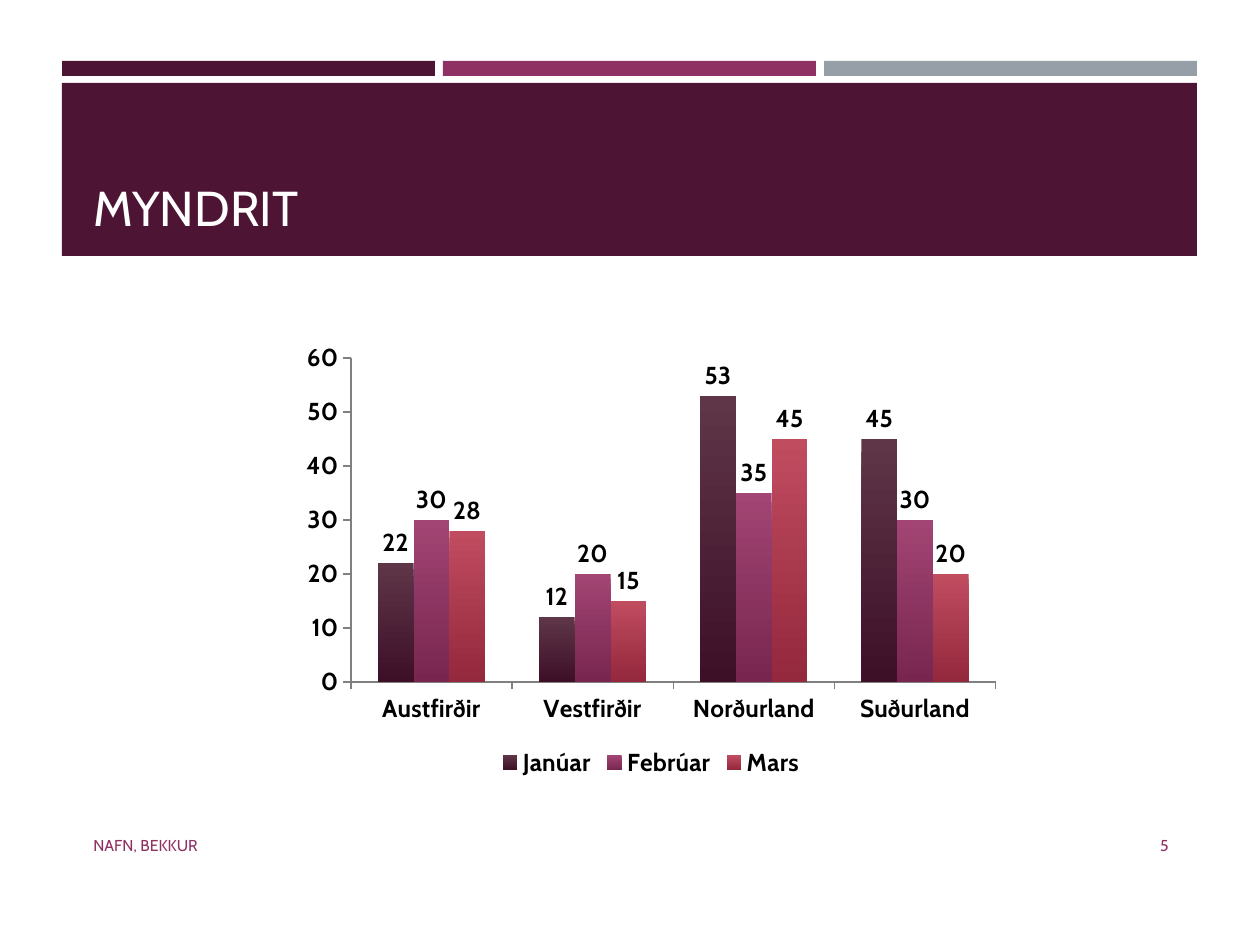
from dataclasses import dataclass

from pptx import Presentation
from pptx import util as u
from pptx.chart.data import CategoryChartData
from pptx.dml.color import RGBColor
from pptx.enum import chart as ch, shapes, text


@dataclass(frozen=True)
class Theme:
    """Colours, font and type sizes of the slide."""
    font: str = "Cabin"
    plum: str = "4D1434"
    rose: str = "903163"
    grey: str = "969FA7"
    white: str = "FFFFFF"
    black: str = "000000"
    axis: str = "808080"
    shades: tuple = (("5F3548", "3D1028"), ("A24574", "782650"),
                     ("C04C60", "94283C"))
    title: int = 28
    chart: int = 14
    foot: int = 9


THEME = Theme()
SCALE = 914400 / 126
AREAS = ("Austfirðir", "Vestfirðir", "Norðurland", "Suðurland")
MONTHS = {"Janúar": (22, 12, 53, 45), "Febrúar": (30, 20, 35, 30),
          "Mars": (28, 15, 45, 20)}


def px(*vals):
    """Turn pixels into EMU lengths."""
    return [u.Emu(round(val * SCALE)) for val in vals]


def rgb(code):
    """Turn a hex code into a colour."""
    return RGBColor.from_string(code)


def style(font, size, color, bold=False):
    """Set the face, size, colour and weight of a font."""
    font.name, font.size, font.bold = THEME.font, u.Pt(size), bold
    font.color.rgb = rgb(color)


def add_bar(slide, box, color):
    """Add a plain filled rectangle."""
    bar = slide.shapes.add_shape(shapes.MSO_SHAPE.RECTANGLE, *px(*box))
    bar.shadow.inherit = False
    bar.fill.solid()
    bar.fill.fore_color.rgb = rgb(color)
    bar.line.fill.background()


def write(shape, words, size, color, anchor, align):
    """Put one styled line of text in a shape."""
    frame = shape.text_frame
    frame.text = words
    frame.word_wrap = True
    frame.auto_size = text.MSO_AUTO_SIZE.NONE
    frame.vertical_anchor = anchor
    para = frame.paragraphs[0]
    para.alignment = align
    style(para.font, size, color)


def add_title(slide, box, words):
    """Move and fill the title placeholder on top of the band."""
    title = slide.shapes.title
    title.left, title.top, title.width, title.height = px(*box)
    write(title, words, THEME.title, THEME.white,
          text.MSO_ANCHOR.BOTTOM, text.PP_ALIGN.LEFT)
    tree = slide.shapes.element
    tree.remove(title.element)
    tree.append(title.element)


def add_foot(slide, box, words, align):
    """Add a small footer text."""
    note = slide.shapes.add_textbox(*px(*box))
    write(note, words, THEME.foot, THEME.rose, text.MSO_ANCHOR.MIDDLE, align)


def shade(fill, tones):
    """Fade a fill from the first tone at the top to the second."""
    fill.gradient()
    fill.gradient_angle = 270
    for stop, tone in zip(fill.gradient_stops, tones):
        stop.color.rgb = rgb(tone)


def add_chart(slide, box):
    """Add the clustered column chart of areas by month."""
    data = CategoryChartData()
    data.categories = AREAS
    for month, vals in MONTHS.items():
        data.add_series(month, vals)
    kind = ch.XL_CHART_TYPE.COLUMN_CLUSTERED
    chart = slide.shapes.add_chart(kind, *px(*box), data).chart
    style(chart.font, THEME.chart, THEME.black, True)
    chart.has_title = False
    chart.has_legend = True
    chart.legend.position = ch.XL_LEGEND_POSITION.BOTTOM
    chart.legend.include_in_layout = False
    for axis in (chart.category_axis, chart.value_axis):
        axis.has_major_gridlines = False
        axis.major_tick_mark = ch.XL_TICK_MARK.OUTSIDE
        axis.format.line.color.rgb = rgb(THEME.axis)
    scale = chart.value_axis
    scale.minimum_scale, scale.maximum_scale, scale.major_unit = 0, 60, 10
    plot = chart.plots[0]
    plot.gap_width, plot.overlap = 150, 0
    plot.vary_by_categories = False
    for row, tones in zip(plot.series, THEME.shades):
        shade(row.format.fill, tones)
        labels = row.data_labels
        labels.show_value = True
        labels.position = ch.XL_LABEL_POSITION.OUTSIDE_END
        style(labels.font, THEME.chart, THEME.black, True)


def main():
    """Build and save the slide."""
    deck = Presentation()
    deck.slide_width, deck.slide_height = px(1260, 945)
    slide = deck.slides.add_slide(deck.slide_layouts[5])
    for col, color in enumerate((THEME.plum, THEME.rose, THEME.grey)):
        add_bar(slide, (62 + 381 * col, 61, 373, 15), color)
    add_bar(slide, (62, 83, 1135, 173), THEME.plum)
    add_title(slide, (81, 94, 1101, 149), "MYNDRIT")
    add_chart(slide, (292, 334, 718, 449))
    add_foot(slide, (81, 820, 672, 50), "NAFN, BEKKUR", text.PP_ALIGN.LEFT)
    add_foot(slide, (1075, 820, 106, 50), "5", text.PP_ALIGN.RIGHT)
    deck.save("out.pptx")


if __name__ == "__main__":
    main()
